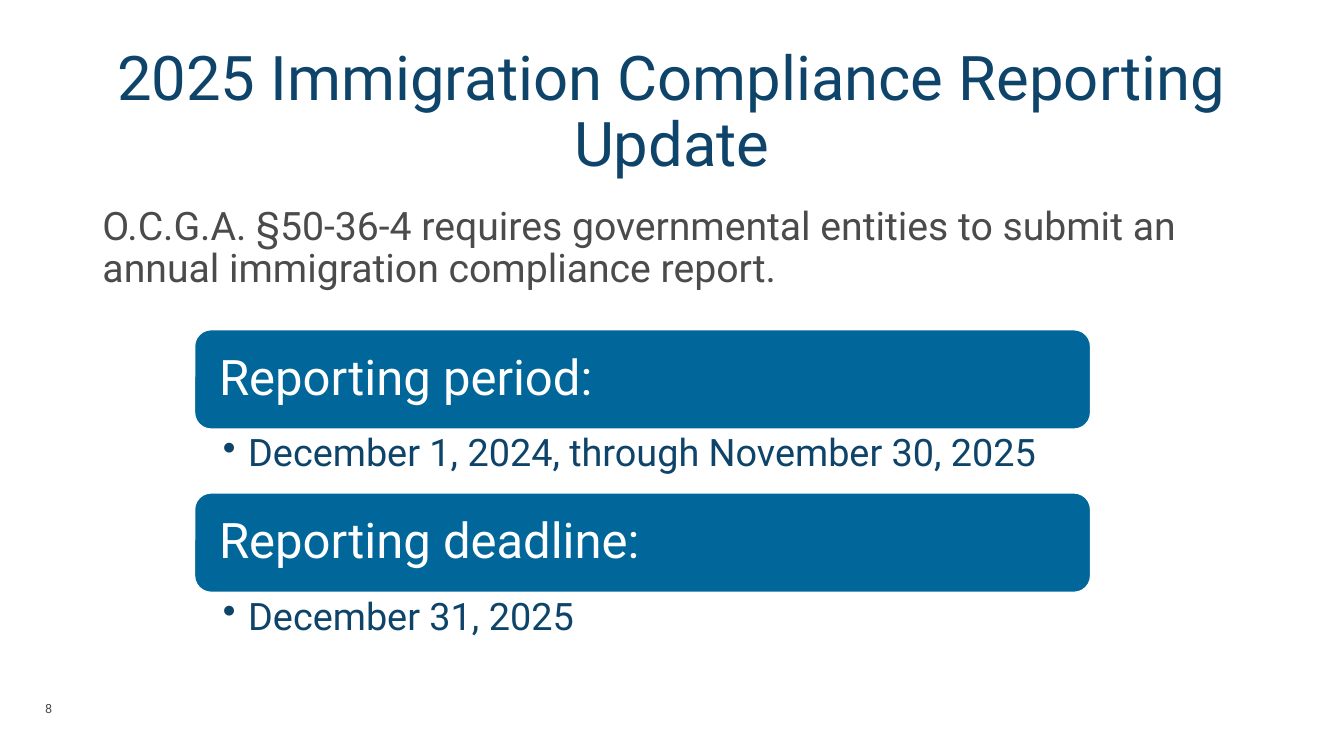
"""Build the slide on the 2025 immigration compliance report."""
import pptx
import pptx.util
import pptx.dml.color
import pptx.enum.shapes
import pptx.enum.text
import pptx.oxml.ns
import lxml.etree

Pt = pptx.util.Pt
Align = pptx.enum.text.PP_ALIGN
Anchor = pptx.enum.text.MSO_ANCHOR
HUES = {"navy": "0E4469", "blue": "016699", "gray": "4B4B4B", "white": "FFFFFF"}


def hue(name):
    return pptx.dml.color.RGBColor.from_string(HUES[name])


def write(shape, text, size, color, anchor, pads, align=Align.LEFT, mark=None, dent=0):
    frame = shape.text_frame
    frame.text = text
    frame.word_wrap = True
    frame.auto_size = pptx.enum.text.MSO_AUTO_SIZE.NONE
    frame.vertical_anchor = anchor
    frame.margin_left, frame.margin_top, frame.margin_right, frame.margin_bottom = map(Pt, pads)
    para = frame.paragraphs[0]
    para.alignment = align
    para.line_spacing = 0.9
    para.space_before = Pt(0)
    props = para._p.get_or_add_pPr()
    props.set("marL", str(Pt(dent)))
    props.set("indent", str(-Pt(dent)))
    kind = "a:buChar" if mark else "a:buNone"
    bullet = lxml.etree.SubElement(props, pptx.oxml.ns.qn(kind))
    if mark:
        bullet.set("char", mark)
    font = para.runs[0].font
    font.name = "Roboto"
    font.size = Pt(size)
    font.color.rgb = hue(color)


deck = pptx.Presentation()
deck.slide_width, deck.slide_height = Pt(960), Pt(540)
slide = deck.slides.add_slide(deck.slide_layouts[1])
shapes = slide.shapes
title, body = slide.placeholders
plain = (7.2, 3.6, 7.2, 3.6)

for holder, top, height in ((title, 28.8, 104.4), (body, 144, 303)):
    holder.left, holder.top = Pt(66), Pt(top)
    holder.width, holder.height = Pt(828), Pt(height)

write(title, "2025 Immigration Compliance Reporting Update", 44, "navy",
      Anchor.MIDDLE, plain, Align.CENTER)
write(body, "O.C.G.A. §50-36-4 requires governmental entities to submit an "
      "annual immigration compliance report.", 28, "gray", Anchor.TOP, plain)

left, width, first, pitch, tall = 139, 640, 235.5, 116.6, 71
items = (
    ("Reporting period:", "December 1, 2024, through November 30, 2025"),
    ("Reporting deadline:", "December 31, 2025"),
)
for row, (head, date) in enumerate(items):
    top = first + row * pitch
    bar = shapes.add_shape(pptx.enum.shapes.MSO_SHAPE.ROUNDED_RECTANGLE,
                           Pt(left), Pt(top), Pt(width), Pt(tall))
    bar.shadow.inherit = False
    bar.fill.solid()
    bar.fill.fore_color.rgb = hue("blue")
    bar.line.color.rgb = hue("white")
    bar.line.width = Pt(1)
    write(bar, head, 35, "white", Anchor.MIDDLE, (14, 10.8, 14, 10.8))
    note = shapes.add_textbox(Pt(left), Pt(top + tall), Pt(width), Pt(45.5))
    write(note, date, 27, "navy", Anchor.TOP, (20.3, 3.6, 19.2, 3.6), mark="•", dent=18)

page = shapes.add_textbox(Pt(25.2), Pt(492), Pt(373), Pt(28.8))
write(page, "8", 9, "gray", Anchor.MIDDLE, plain)

deck.save("out.pptx")
